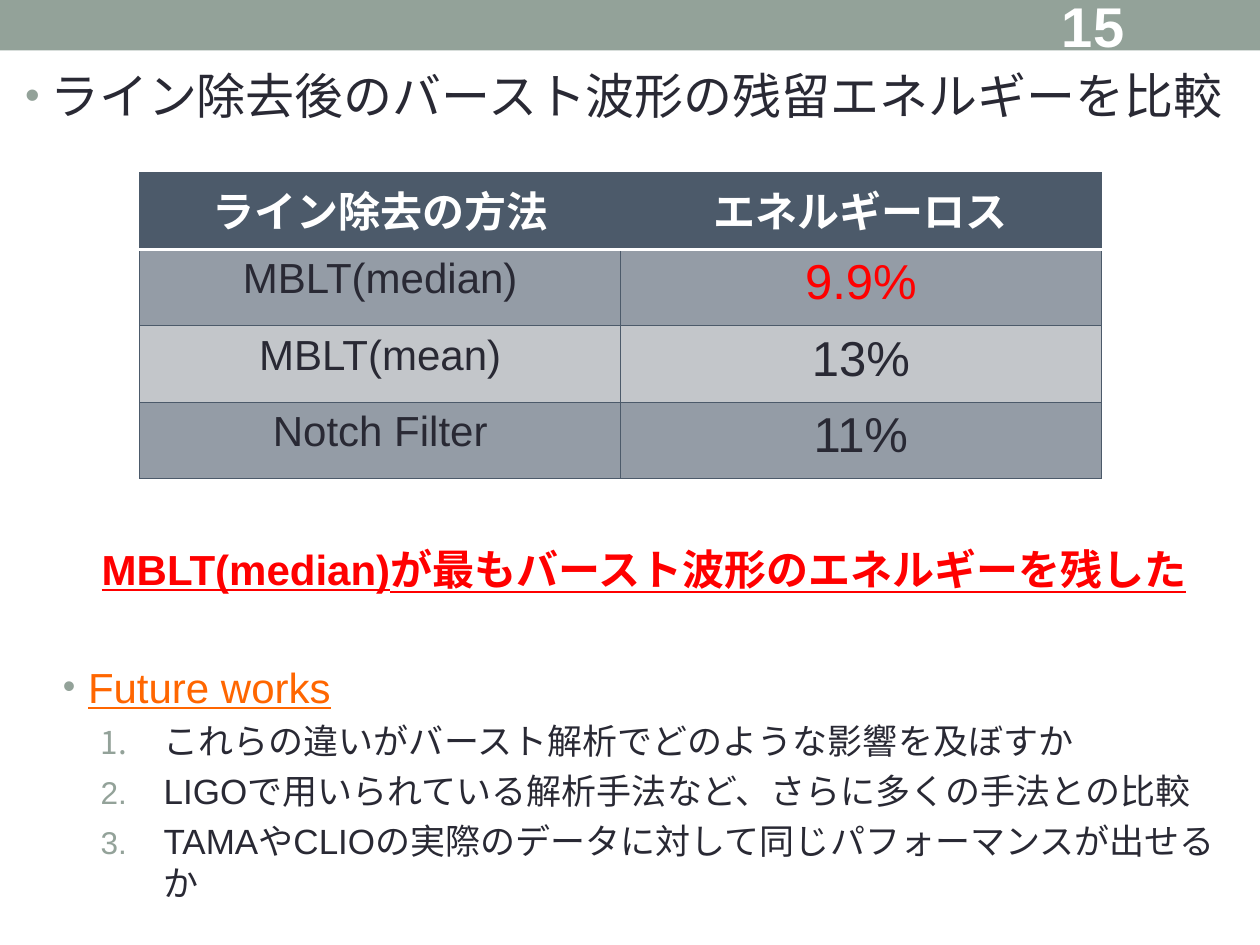
from lxml.etree import SubElement
from pptx import Presentation
from pptx.dml.color import RGBColor
from pptx.enum.shapes import MSO_SHAPE
from pptx.enum.text import MSO_ANCHOR, PP_ALIGN
from pptx.oxml import parse_xml
from pptx.oxml.ns import nsdecls, qn
from pptx.util import Inches, Pt

COLORS = {
    "sage": "93A299", "slate": "4C5A6A", "dark_row": "949CA6",
    "light_row": "C3C6CA", "ink": "292934", "white": "FFFFFF",
    "red": "FF0000", "orange": "FF6600",
}
FONT = "Arial"

TITLE = {"text": "ライン除去後のバースト波形の残留エネルギーを比較",
         "font": {"size": 28}, "indent": (0.2, -0.2), "before": 4,
         "bullet": ("buChar", "char", "•", 85)}
CONCLUSION = {"text": "MBLT(median)が最もバースト波形のエネルギーを残した",
              "font": {"size": 24, "color": "red", "bold": True, "underline": True},
              "indent": (0.3, 0), "before": 239.5, "align": PP_ALIGN.CENTER}
FUTURE = {"text": "Future works",
          "font": {"size": 24, "color": "orange", "underline": True},
          "indent": (0.5, -0.2), "before": 38.5,
          "bullet": ("buChar", "char", "•", 85)}
WORKS = [
    "これらの違いがバースト解析でどのような影響を及ぼすか",
    "LIGOで用いられている解析手法など、さらに多くの手法との比較",
    "TAMAやCLIOの実際のデータに対して同じパフォーマンスが出せるか",
]
WORK_STYLE = {"font": {"size": 20}, "indent": (1.1, -0.5), "before": 4.6,
              "bullet": ("buAutoNum", "type", "arabicPeriod", 90)}
ROWS = [
    ("ライン除去の方法", "エネルギーロス"),
    ("MBLT(median)", "9.9%"),
    ("MBLT(mean)", "13%"),
    ("Notch Filter", "11%"),
]


def rgb(name):
    return RGBColor.from_string(COLORS[name])


def add_span(para, text, size, color="ink", **formats):
    span = para.add_run()
    span.text = text
    for name, value in {"name": FONT, "size": Pt(size), **formats}.items():
        setattr(span.font, name, value)
    span.font.color.rgb = rgb(color)


def set_indent(para, left, first):
    properties = para._p.get_or_add_pPr()
    properties.set("marL", str(Inches(left)))
    properties.set("indent", str(Inches(first)))


def set_bullet(para, tag, key, value, percent):
    properties = para._p.get_or_add_pPr()
    color = SubElement(properties, qn("a:buClr"))
    SubElement(color, qn("a:srgbClr"), val=COLORS["sage"])
    SubElement(properties, qn("a:buSzPct"), val=str(percent * 1000))
    SubElement(properties, qn("a:buFont"), typeface=FONT)
    SubElement(properties, qn(f"a:{tag}"), {key: value})


def set_border(cell, side, color, width):
    properties = cell._tc.get_or_add_tcPr()
    line = parse_xml(
        f'<a:ln{side} {nsdecls("a")} w="{Pt(width)}"><a:solidFill>'
        f'<a:srgbClr val="{COLORS[color]}"/></a:solidFill></a:ln{side}>')
    properties.insert("LRTB".index(side), line)


def add_header(page, left, top, width, height):
    band = page.shapes.add_shape(
        MSO_SHAPE.RECTANGLE, left, top, width, height)
    band.shadow.inherit = False
    band.fill.solid()
    band.fill.fore_color.rgb = rgb("sage")
    band.line.fill.background()
    box = page.shapes.add_textbox(
        left + Inches(8.33), top + Inches(0.02), Inches(1.17), Inches(0.36))
    frame = box.text_frame
    frame.word_wrap = True
    frame.vertical_anchor = MSO_ANCHOR.MIDDLE
    add_span(frame.paragraphs[0], "15", 32, "white", bold=True)


def add_body(page, left, top, width, height):
    frame = page.shapes.add_textbox(left, top, width, height).text_frame
    frame.word_wrap = True
    items = [TITLE, CONCLUSION, FUTURE]
    items += [{"text": work, **WORK_STYLE} for work in WORKS]
    for index, item in enumerate(items):
        para = frame.add_paragraph() if index else frame.paragraphs[0]
        para.space_before = Pt(item["before"])
        para.alignment = item.get("align", PP_ALIGN.LEFT)
        set_indent(para, *item["indent"])
        if "bullet" in item:
            set_bullet(para, *item["bullet"])
        add_span(para, item["text"], **item["font"])


def cell_style(row, column):
    if row == 0:
        return "slate", {"size": 24, "color": "white", "bold": True}
    fill = "dark_row" if row % 2 else "light_row"
    color = "red" if (row, column) == (1, 1) else "ink"
    return fill, {"size": 28 if column else 24, "color": color, "bold": False}


def add_loss_table(page, left, top, width, height):
    table = page.shapes.add_table(
        len(ROWS), len(ROWS[0]), left, top, width, height).table
    for row, texts in enumerate(ROWS):
        for column, text in enumerate(texts):
            cell = table.cell(row, column)
            fill, font = cell_style(row, column)
            cell.fill.solid()
            cell.fill.fore_color.rgb = rgb(fill)
            para = cell.text_frame.paragraphs[0]
            para.alignment = PP_ALIGN.CENTER
            add_span(para, text, **font)
            for side in "LRTB":
                divider = (row, side) in ((0, "B"), (1, "T"))
                set_border(cell, side, *(("white", 2.08) if divider
                                         else ("slate", 0.75)))


def main():
    deck = Presentation()
    deck.slide_width, deck.slide_height = Inches(10), Inches(7.5)
    page = deck.slides.add_slide(deck.slide_layouts[6])
    add_header(page, 0, 0, deck.slide_width, Inches(0.4))
    add_body(page, Inches(0.1), Inches(0.47), Inches(9.72), Inches(6.84))
    add_loss_table(page, Inches(1.11), Inches(1.37), Inches(7.63), Inches(2.43))
    deck.save("out.pptx")


if __name__ == "__main__":
    main()
